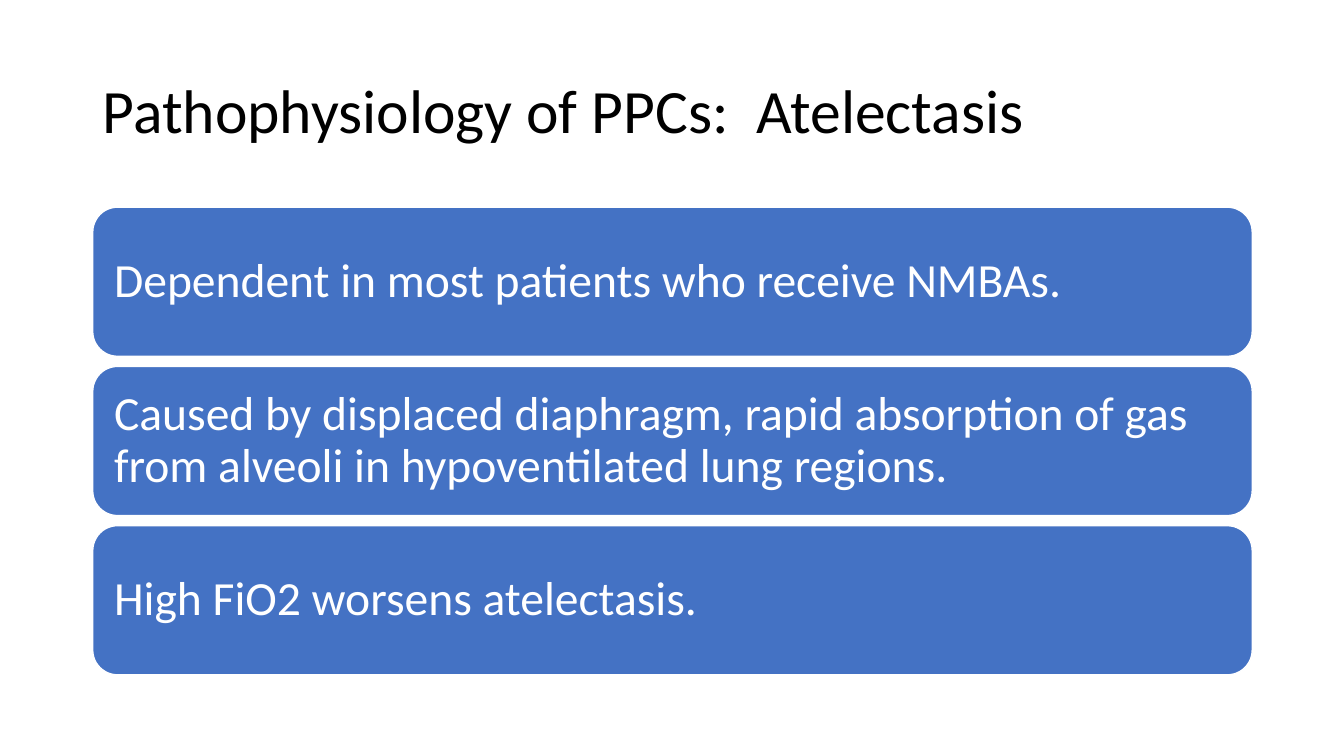
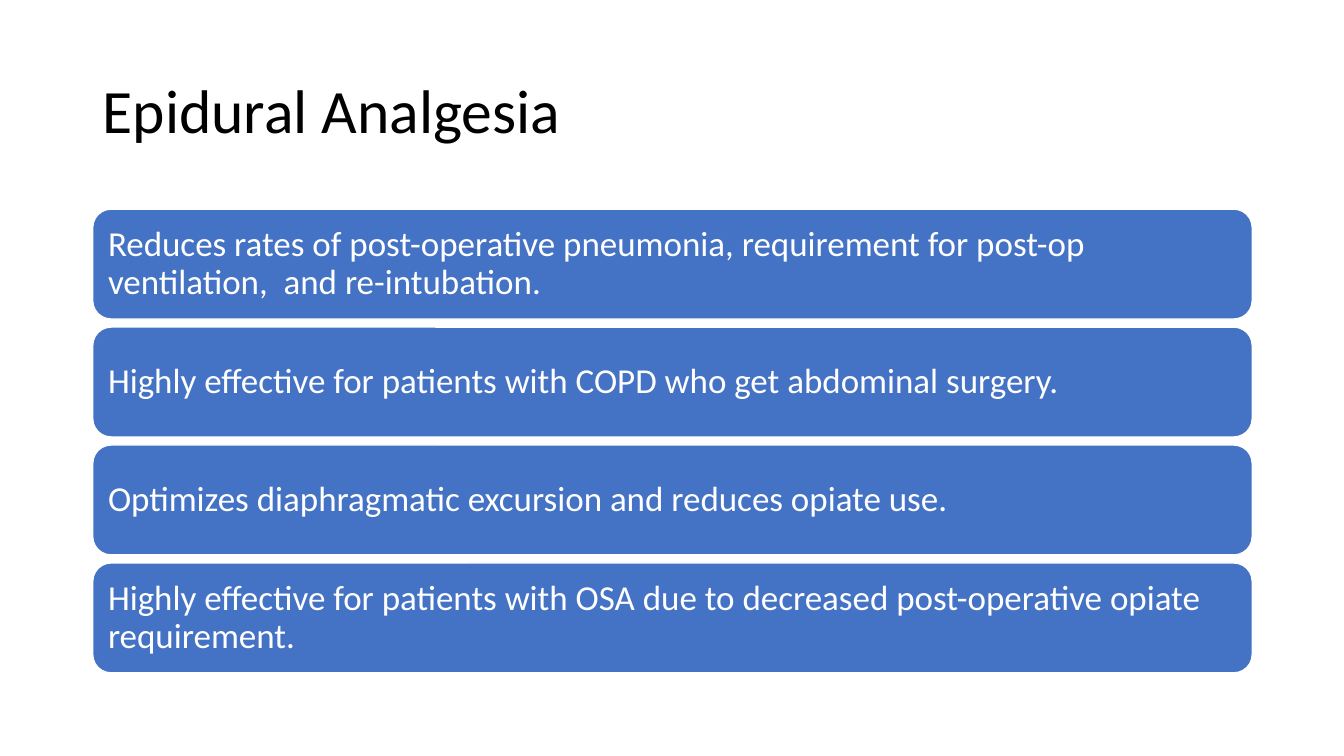
from pptx import Presentation
from pptx.dml.color import RGBColor
from pptx.enum.shapes import MSO_SHAPE
from pptx.enum.text import MSO_ANCHOR, PP_ALIGN
from pptx.util import Inches, Pt

ROUNDED = MSO_SHAPE.ROUNDED_RECTANGLE
MIDDLE = MSO_ANCHOR.MIDDLE
LEFT = PP_ALIGN.LEFT

BLUE = RGBColor(0x44, 0x72, 0xC4)
WHITE = RGBColor(0xFF, 0xFF, 0xFF)
BLACK = RGBColor(0x00, 0x00, 0x00)
FONT = "Calibri"

MARGIN = 0.92
CONTENT_WIDTH = 11.5
BODY_MIDDLE = 4.375

SLIDES = [
    {
        "title": "Pathophysiology of PPCs:  Atelectasis",
        "height": 1.48,
        "gap": 0.1,
        "inset": 0.14,
        "size": 34,
        "points": [
            "Dependent in most patients who receive NMBAs.",
            "Caused by displaced diaphragm, rapid absorption of gas from alveoli in hypoventilated lung regions.",
            "High FiO2 worsens atelectasis.",
        ],
    },
    {
        "title": "Epidural Analgesia",
        "height": 1.09,
        "gap": 0.08,
        "inset": 0.1,
        "size": 25,
        "points": [
            "Reduces rates of post-operative pneumonia, requirement for post-op ventilation,  and re-intubation.",
            "Highly effective for patients with COPD who get abdominal surgery.",
            "Optimizes diaphragmatic excursion and reduces opiate use.",
            "Highly effective for patients with OSA due to decreased post-operative opiate requirement.",
        ],
    },
]


def write_text(box, text, size, color):
    frame = box.text_frame
    frame.word_wrap = True
    frame.vertical_anchor = MIDDLE
    para = frame.paragraphs[0]
    para.alignment = LEFT
    para.line_spacing = 0.9
    span = para.add_run()
    span.text = text
    span.font.name = FONT
    span.font.size = Pt(size)
    span.font.color.rgb = color


def add_card(page, top, height, inset):
    card = page.shapes.add_shape(
        ROUNDED, Inches(MARGIN), Inches(top), Inches(CONTENT_WIDTH), Inches(height)
    )
    card.shadow.inherit = False
    card.fill.solid()
    card.fill.fore_color.rgb = BLUE
    card.line.color.rgb = WHITE
    card.line.width = Pt(1)
    frame = card.text_frame
    frame.margin_left = frame.margin_right = Inches(inset)
    frame.margin_top = frame.margin_bottom = Inches(inset)
    return card


deck = Presentation()
deck.slide_width = Inches(13.33)
deck.slide_height = Inches(7.5)
blank_layout = deck.slide_layouts[6]

for content in SLIDES:
    page = deck.slides.add_slide(blank_layout)
    title = page.shapes.add_textbox(
        Inches(MARGIN), Inches(0.4), Inches(CONTENT_WIDTH), Inches(1.45)
    )
    write_text(title, content["title"], 44, BLACK)

    points = content["points"]
    height = content["height"]
    pitch = height + content["gap"]
    first_top = BODY_MIDDLE - (len(points) * pitch - content["gap"]) / 2
    for index, point in enumerate(points):
        card = add_card(page, first_top + index * pitch, height, content["inset"])
        write_text(card, point, content["size"], WHITE)

deck.save("out.pptx")
